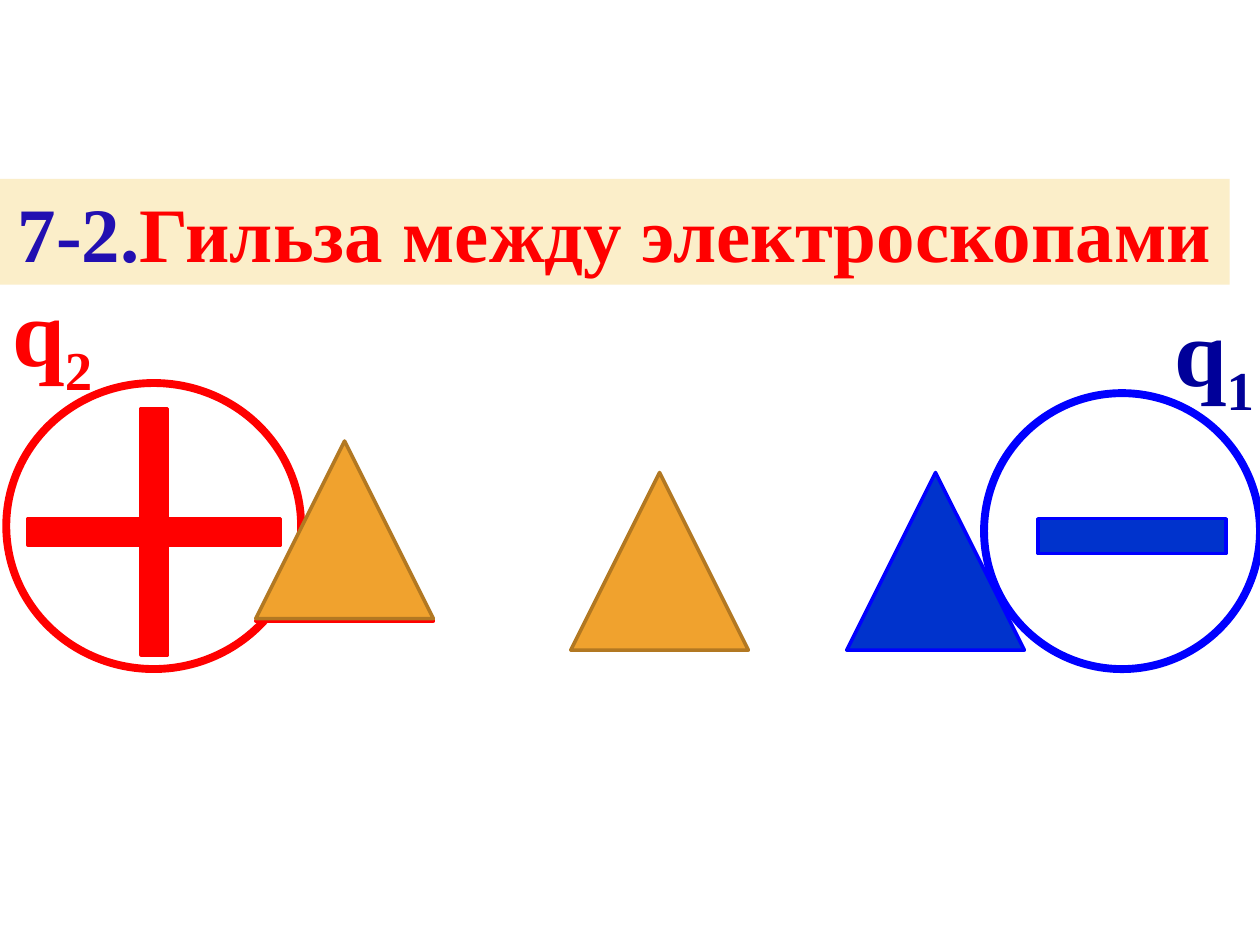
from pptx import Presentation
from pptx.dml.color import RGBColor
from pptx.enum.shapes import MSO_SHAPE
from pptx.enum.text import MSO_ANCHOR, MSO_AUTO_SIZE, PP_ALIGN
from pptx.util import Inches, Pt

OVAL, TRIANGLE, RECTANGLE = MSO_SHAPE.OVAL, MSO_SHAPE.ISOSCELES_TRIANGLE, MSO_SHAPE.RECTANGLE
PLUS, MINUS = MSO_SHAPE.MATH_PLUS, MSO_SHAPE.MATH_MINUS
MIDDLE, FIT_SHAPE, CENTER = MSO_ANCHOR.MIDDLE, MSO_AUTO_SIZE.SHAPE_TO_FIT_TEXT, PP_ALIGN.CENTER

RED, BLUE, DEEP_BLUE = "FF0000", "0000FF", "0033CC"
AMBER, BROWN, CREAM = "F0A22E", "B27822", "FBEEC9"
SLEEVE_SIZE = 1.41


def add_figure(preset, box, fill=None, line=None, width=2):
    """Draw a preset shape; a missing fill or line colour leaves that part empty."""
    figure = slide.shapes.add_shape(preset, *map(Inches, box))
    figure.shadow.inherit = False
    if fill:
        figure.fill.solid()
        figure.fill.fore_color.rgb = RGBColor.from_string(fill)
    else:
        figure.fill.background()
    if line:
        figure.line.color.rgb = RGBColor.from_string(line)
        figure.line.width = Pt(width)
    else:
        figure.line.fill.background()
    return figure


def add_bold_run(paragraph, text, size, color):
    run = paragraph.add_run()
    run.text = text
    font_format = {"name": "Times New Roman", "size": Pt(size), "bold": True}
    for attribute, value in font_format.items():
        setattr(run.font, attribute, value)
    run.font.color.rgb = RGBColor.from_string(color)
    return run


prs = Presentation()
prs.slide_width, prs.slide_height = Inches(10), Inches(7.5)
slide = prs.slides.add_slide(prs.slide_layouts[6])

# Electroscope balls
add_figure(OVAL, (0.05, 3.04, 2.34, 2.27), line=RED, width=4.5)
add_figure(OVAL, (7.81, 3.12, 2.19, 2.19), line=BLUE, width=4.5)

# Charge labels
for left, top, index, color in [(0, 2.11, "2", RED), (9.22, 2.27, "1", "000099")]:
    charge = slide.shapes.add_textbox(*map(Inches, (left, top, 0.88, 1.01))).text_frame
    charge.word_wrap = False
    charge.auto_size = FIT_SHAPE
    add_bold_run(charge.paragraphs[0], "q", 54, color)
    subscript = add_bold_run(charge.paragraphs[0], index, 54, color)
    subscript.font._element.set("baseline", "-25000")

# Charge signs
plus = add_figure(PLUS, (-0.14, 2.89, 2.73, 2.66), RED, RED)
plus.adjustments[0] = 0.079
add_figure(MINUS, (7.97, 3.67, 2.03, 1.17), DEEP_BLUE, BLUE)

# Sleeve: neutral, touching the negative ball, touching the positive ball
for left, top, fill, line in [
    (4.53, 3.75, AMBER, BROWN),
    (6.72, 3.75, DEEP_BLUE, BLUE),
    (2.03, 3.52, RED, RED),
    (2.03, 3.5, AMBER, BROWN),
]:
    add_figure(TRIANGLE, (left, top, SLEEVE_SIZE, SLEEVE_SIZE), fill, line)

# Title band
title = add_figure(RECTANGLE, (0, 1.42, 9.76, 0.84), CREAM).text_frame
title_format = {"word_wrap": False, "auto_size": FIT_SHAPE, "vertical_anchor": MIDDLE}
for attribute, value in title_format.items():
    setattr(title, attribute, value)
heading = title.paragraphs[0]
heading.alignment = CENTER
add_bold_run(heading, "7-2.", 44, "220FB1")
add_bold_run(heading, "Гильза между электроскопами", 44, RED)

prs.save("out.pptx")
